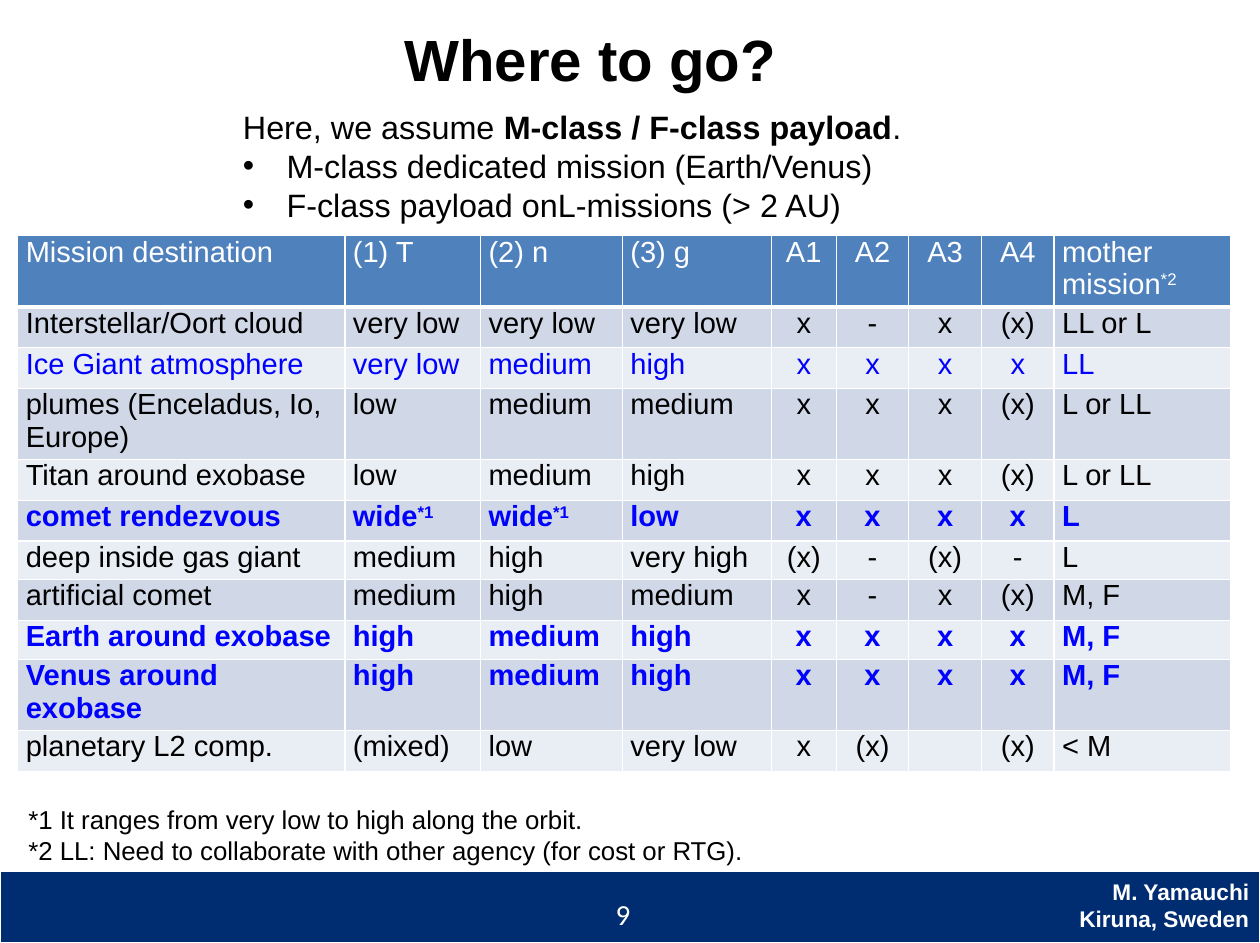
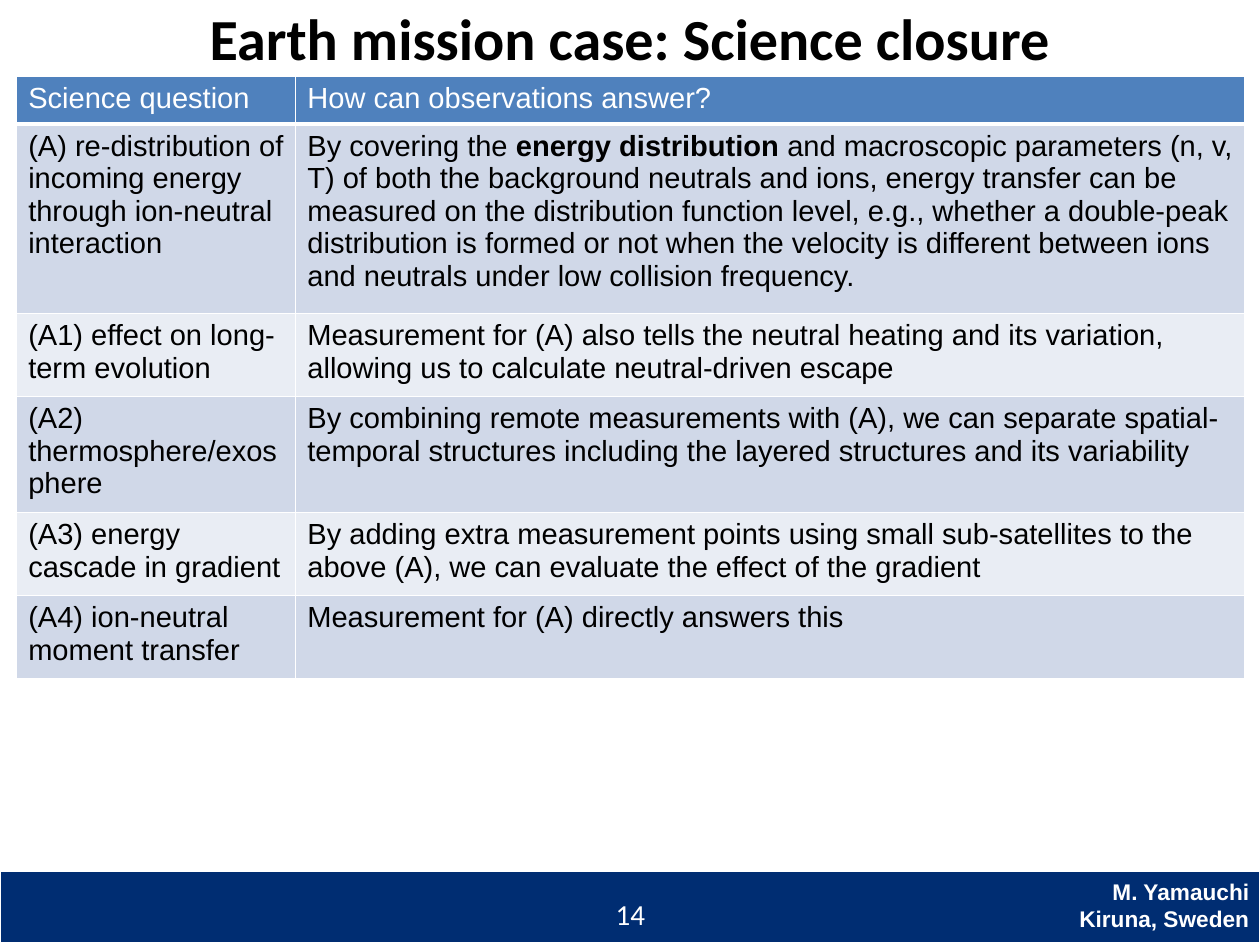
import pptx
import pptx.dml.color
import pptx.enum.shapes
import pptx.enum.text
import pptx.oxml.ns
import pptx.util
import lxml.etree

Pt = pptx.util.Pt
Align = pptx.enum.text.PP_ALIGN
Anchor = pptx.enum.text.MSO_ANCHOR

COLORS = {
    "white": "FFFFFF", "black": "000000", "band": "002D72", "header": "4F81BD",
    "row_dark": "D0D8E8", "row_light": "E9EDF4", "highlight": "0000FF",
}
SLIDE_WIDTH, SLIDE_HEIGHT = 780, 584
BAND_TOP = 539.5
BODY_FONT = "Arial"


def rgb(name):
    return pptx.dml.color.RGBColor.from_string(COLORS[name])


def add_element(parent, tag, **attributes):
    element = lxml.etree.SubElement(parent, pptx.oxml.ns.qn(tag))
    for key, value in attributes.items():
        element.set(key, str(value))
    return element


def write_text(frame, paragraphs, size=18, font=BODY_FONT, color="black", bold=False,
               align=Align.LEFT, insets=(7.2, 3.6), anchor=Anchor.TOP):
    """Text between bars is bold, text after ^ is superscript, a leading • makes a bullet."""
    frame.word_wrap = True
    frame.vertical_anchor = anchor
    frame.margin_left = frame.margin_right = Pt(insets[0])
    frame.margin_top = frame.margin_bottom = Pt(insets[1])
    for number, text in enumerate(paragraphs):
        paragraph = frame.add_paragraph() if number else frame.paragraphs[0]
        paragraph.alignment = align
        if text.startswith("•"):
            text = text[1:]
            properties = paragraph._p.get_or_add_pPr()
            properties.set("marL", str(Pt(27)))
            properties.set("indent", str(Pt(-27)))
            add_element(properties, "a:buFont", typeface=BODY_FONT)
            add_element(properties, "a:buChar", char="•")
        for index, piece in enumerate(text.split("|")):
            normal, _, raised = piece.partition("^")
            for content, baseline in ((normal, 0), (raised, 30000)):
                if not content:
                    continue
                run = paragraph.add_run()
                run.text = content
                run.font.size = Pt(size)
                run.font.name = font
                run.font.bold = bold or index % 2 == 1
                run.font.color.rgb = rgb(color)
                if baseline:
                    run._r.get_or_add_rPr().set("baseline", str(baseline))


def add_text(slide, box, paragraphs, **text_format):
    shape = slide.shapes.add_textbox(*map(Pt, box))
    write_text(shape.text_frame, paragraphs, **text_format)


def add_title(slide, box, text, font=BODY_FONT):
    add_text(slide, box, [text], size=36, font=font, bold=True,
             align=Align.CENTER, anchor=Anchor.MIDDLE)


def add_footer(slide, page_number):
    band = slide.shapes.add_shape(
        pptx.enum.shapes.MSO_SHAPE.RECTANGLE,
        *map(Pt, (0, BAND_TOP, SLIDE_WIDTH, SLIDE_HEIGHT - BAND_TOP)))
    band.shadow.inherit = False
    band.fill.solid()
    band.fill.fore_color.rgb = rgb("band")
    band.line.color.rgb = rgb("white")
    band.line.width = Pt(0.75)
    add_text(slide, (651.5, BAND_TOP + 0.5, 129, 41), ["M. Yamauchi Kiruna, Sweden"],
             size=14, color="white", bold=True, align=Align.RIGHT)
    add_text(slide, (374, BAND_TOP + 12, 50, 29), [str(page_number)],
             font="Calibri", color="white")


def set_cell_borders(cell, bottom_width):
    properties = cell._tc.get_or_add_tcPr()
    widths = {"a:lnL": 1, "a:lnR": 1, "a:lnT": 1, "a:lnB": bottom_width}
    for position, (tag, width) in enumerate(widths.items()):
        line = add_element(properties, tag, w=Pt(width))
        fill = add_element(line, "a:solidFill")
        add_element(fill, "a:srgbClr", val=COLORS["white"])
        properties.insert(position, line)


def add_banded_table(slide, left, top, column_widths, row_heights, rows,
                     row_styles=None, centered_columns=(), insets=(7.2, 3.6)):
    """The first row is the header; row_styles maps a row number to text options."""
    row_styles = row_styles or {}
    table = slide.shapes.add_table(
        len(rows), len(column_widths), Pt(left), Pt(top),
        Pt(sum(column_widths)), Pt(sum(row_heights))).table
    for column, width in zip(table.columns, column_widths):
        column.width = Pt(width)
    for row_number, (height, texts) in enumerate(zip(row_heights, rows)):
        table.rows[row_number].height = Pt(height)
        is_header = row_number == 0
        fill = "header" if is_header else ("row_light", "row_dark")[row_number % 2]
        style = {"color": "white"} if is_header else row_styles.get(row_number, {})
        for column_number, text in enumerate(texts):
            cell = table.cell(row_number, column_number)
            cell.fill.solid()
            cell.fill.fore_color.rgb = rgb(fill)
            set_cell_borders(cell, 3 if is_header else 1)
            align = Align.CENTER if column_number in centered_columns else Align.LEFT
            write_text(cell.text_frame, [text], align=align, insets=insets, **style)
            cell.margin_left = cell.margin_right = Pt(insets[0])
            cell.margin_top = cell.margin_bottom = Pt(insets[1])
            cell.vertical_anchor = Anchor.TOP


DESTINATIONS = [
    ["Mission destination", "(1) T", "(2) n", "(3) g", "A1", "A2", "A3", "A4",
     "mother mission^*2"],
    ["Interstellar/Oort cloud", "very low", "very low", "very low",
     "x", "-", "x", "(x)", "LL or L"],
    ["Ice Giant atmosphere", "very low", "medium", "high", "x", "x", "x", "x", "LL"],
    ["plumes (Enceladus, Io, Europe)", "low", "medium", "medium",
     "x", "x", "x", "(x)", "L or LL"],
    ["Titan around exobase", "low", "medium", "high", "x", "x", "x", "(x)", "L or LL"],
    ["comet rendezvous", "wide^*1", "wide^*1", "low", "x", "x", "x", "x", "L"],
    ["deep inside gas giant", "medium", "high", "very high", "(x)", "-", "(x)", "-", "L"],
    ["artificial comet", "medium", "high", "medium", "x", "-", "x", "(x)", "M, F"],
    ["Earth around exobase", "high", "medium", "high", "x", "x", "x", "x", "M, F"],
    ["Venus around exobase", "high", "medium", "high", "x", "x", "x", "x", "M, F"],
    ["planetary L2 comp.", "(mixed)", "low", "very low", "x", "(x)", "", "(x)", "< M"],
]

SCIENCE_CLOSURE = [
    ["Science question", "How can observations answer?"],
    ["(A) re-distribution of incoming energy through ion-neutral interaction",
     "By covering the |energy distribution |and macroscopic parameters (n, v, T) of both "
     "the background neutrals and ions, energy transfer can be measured on the "
     "distribution function level, e.g., whether a double-peak distribution is formed or "
     "not when the velocity is different between ions and neutrals under low collision "
     "frequency."],
    ["(A1) effect on long-term evolution",
     "Measurement for (A) also tells the neutral heating and its variation, allowing us "
     "to calculate neutral-driven escape"],
    ["(A2) thermosphere/exosphere",
     "By combining remote measurements with (A), we can separate spatial-temporal "
     "structures including the layered structures and its variability"],
    ["(A3) energy cascade in gradient",
     "By adding extra measurement points using small sub-satellites to the above (A), we "
     "can evaluate the effect of the gradient"],
    ["(A4) ion-neutral moment transfer", "Measurement for (A) directly answers this"],
]


def build_destination_slide(slide):
    add_footer(slide, 9)
    add_title(slide, (237.5, 8, 256, 56), "Where to go?")
    # Destination table, with the favoured targets highlighted
    blue = {"color": "highlight"}
    blue_bold = {"color": "highlight", "bold": True}
    single, double = 25.3, 44
    add_banded_table(
        slide, 11, 146,
        [202.5, 84, 87.8, 92.2, 40.3, 44.9, 45, 45, 109],
        [double, single, single, double, single, single, 23.7, single, 24.3, double, single],
        DESTINATIONS, row_styles={2: blue, 5: blue_bold, 8: blue_bold, 9: blue_bold},
        centered_columns=range(4, 8), insets=(5, 0))
    # Footnotes
    add_text(slide, (10.5, 494, 474, 46),
             ["*1 It ranges from very low to high along the orbit.",
              "*2 LL: Need to collaborate with other agency (for cost or RTG)."], size=16)
    # Assumptions
    add_text(slide, (143.3, 63, 503, 80),
             ["Here, we assume |M-class / F-class payload|.",
              "•M-class dedicated mission (Earth/Venus)",
              "•F-class payload onL-missions (> 2 AU)"], size=20)


def build_closure_slide(slide):
    add_footer(slide, 14)
    add_banded_table(slide, 10.3, 47.5, [172.8, 587.5],
                     [29.2, 117.4, 51.4, 71.8, 51.4, 51.4], SCIENCE_CLOSURE)
    add_title(slide, (58.5, -2, 663, 50), "Earth mission case: Science closure",
              font="Calibri")


def main():
    presentation = pptx.Presentation()
    presentation.slide_width = Pt(SLIDE_WIDTH)
    presentation.slide_height = Pt(SLIDE_HEIGHT)
    for build in (build_destination_slide, build_closure_slide):
        build(presentation.slides.add_slide(presentation.slide_layouts[6]))
    presentation.save("out.pptx")


if __name__ == "__main__":
    main()
